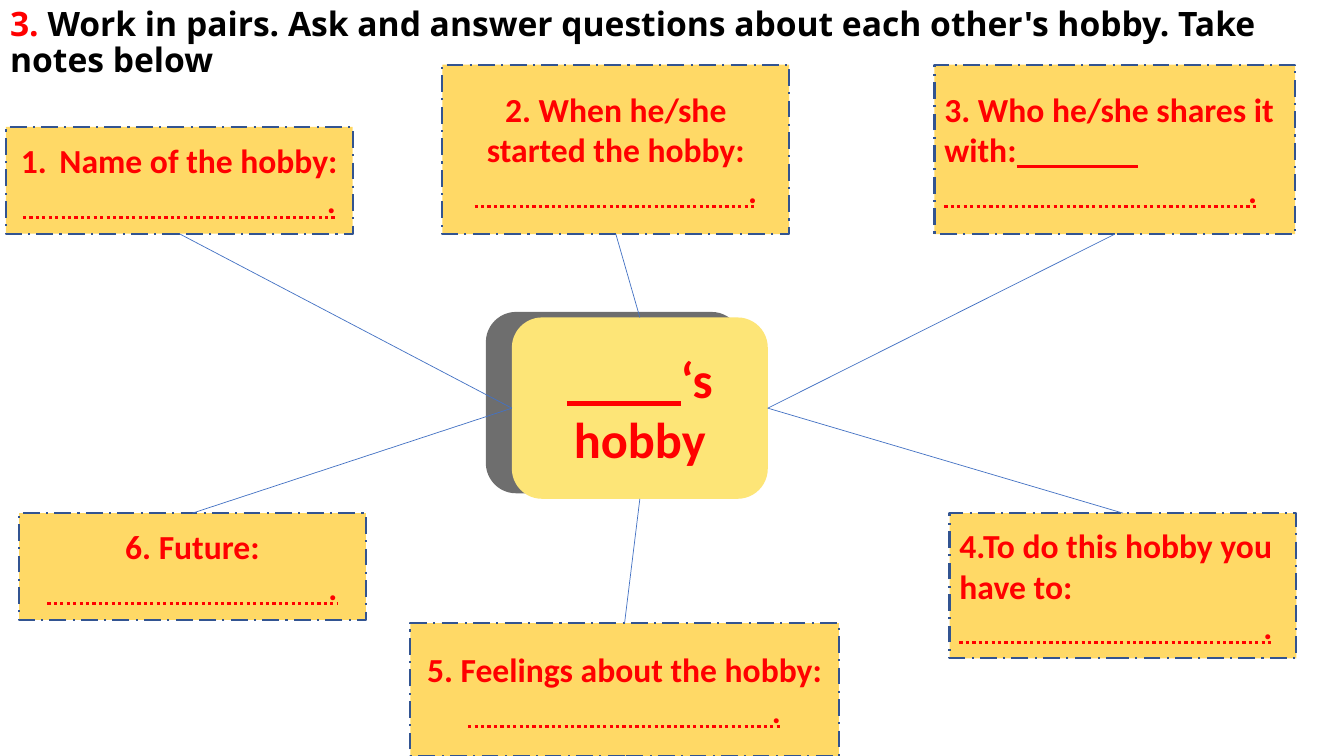
from lxml import etree
from pptx import Presentation
from pptx.dml.color import RGBColor
from pptx.enum.dml import MSO_LINE
from pptx.enum.shapes import MSO_CONNECTOR, MSO_SHAPE
from pptx.enum.text import MSO_ANCHOR, MSO_UNDERLINE, PP_ALIGN
from pptx.oxml.ns import qn
from pptx.util import Cm, Pt

RECTANGLE, ROUNDED = MSO_SHAPE.RECTANGLE, MSO_SHAPE.ROUNDED_RECTANGLE
STRAIGHT = MSO_CONNECTOR.STRAIGHT
LEFT, CENTER = PP_ALIGN.LEFT, PP_ALIGN.CENTER
TOP_ANCHOR, MIDDLE = MSO_ANCHOR.TOP, MSO_ANCHOR.MIDDLE
SOLID, DOTTED = MSO_UNDERLINE.SINGLE_LINE, MSO_UNDERLINE.DOTTED_LINE
LONG_DASH_DOT = MSO_LINE.LONG_DASH_DOT
TOP, LEFT_SIDE, BOTTOM, RIGHT_SIDE = range(4)

COLORS = {"red": "FF0000", "black": "000000", "box": "FFD966", "hub": "FDE577",
          "border": "325491", "link": "4472C4"}

# Content
TITLE = [("3.\u00a0", "red"),
         ("Work in pairs. Ask and answer questions about each other's hobby. "
          "Take notes below", "black")]
HUB = {"place": (12.9, 8, 6.45, 4.57), "blank": 10, "lines": ("‘s", "hobby")}
# place (cm), prompt, numbered, blank after prompt, answer blank, alignment,
# side of the box and side of the hub that are linked
NOTES = [
    ((0.15, 3.2, 8.74, 2.69), "Name of the hobby:", True, 0, 40, CENTER, BOTTOM, LEFT_SIDE),
    ((11.15, 1.63, 8.74, 4.27), "2. When he/she started the hobby:", False, 0, 36, CENTER,
     BOTTOM, TOP),
    ((23.55, 1.63, 9.09, 4.27), "3. Who he/she shares it with:", False, 16, 40, LEFT,
     BOTTOM, RIGHT_SIDE),
    ((0.48, 12.93, 8.74, 2.69), "6. Future:", False, 0, 37, CENTER, TOP, LEFT_SIDE),
    ((10.34, 15.7, 10.8, 3.35), "5. Feelings about the hobby:", False, 0, 40, CENTER,
     TOP, BOTTOM),
    ((23.93, 12.93, 8.74, 3.66), "4.To do this hobby you have to:", False, 0, 40, LEFT,
     TOP, RIGHT_SIDE),
]


def color(name):
    return RGBColor.from_string(COLORS[name])


def add_box(kind, place, fill):
    box = page.shapes.add_shape(kind, *map(Cm, place))
    box.shadow.inherit = False
    box.fill.solid()
    box.fill.fore_color.rgb = color(fill)
    box.text_frame.word_wrap = True
    box.text_frame.vertical_anchor = MIDDLE
    return box


def add_span(para, text, underline=None):
    span = para.add_run()
    span.text = text
    if underline:
        span.font.underline = underline


def format_para(para, size, align):
    para.alignment = align
    para.font.name = "Calibri"
    para.font.size = Pt(size)
    para.font.bold = True
    para.font.color.rgb = color("red")


def add_number(para):
    props = para._p.get_or_add_pPr()
    props.set("marL", str(Cm(0.97)))
    props.set("indent", str(-Cm(0.97)))
    etree.SubElement(props, qn("a:buFont"), typeface="+mj-lt")
    etree.SubElement(props, qn("a:buAutoNum"), type="arabicPeriod")


deck = Presentation()
deck.slide_width, deck.slide_height = Cm(33.87), Cm(19.05)
page = deck.slides.add_slide(deck.slide_layouts[5])

# Title
title = page.shapes.title
title.left, title.top, title.width, title.height = map(Cm, (0, 0.05, 33.87, 2.31))
title.text_frame.word_wrap = True
title.text_frame.vertical_anchor = TOP_ANCHOR
para = title.text_frame.paragraphs[0]
para.alignment = LEFT
para.line_spacing = 0.9
para.font.name = "Open Sans"
para.font.size = Pt(24)
para.font.bold = True
for text, name in TITLE:
    add_span(para, text)
    para.runs[-1].font.color.rgb = color(name)

# Hub with its offset shadow
hub = add_box(ROUNDED, HUB["place"], "hub")
hub.line.fill.background()
effects = hub._element.spPr.find(qn("a:effectLst"))
shadow = etree.SubElement(effects, qn("a:outerShdw"), blurRad="0", dist=str(Pt(19)),
                          dir=str(192 * 60000), algn="ctr", rotWithShape="0")
shade = etree.SubElement(shadow, qn("a:srgbClr"), val=COLORS["black"])
etree.SubElement(shade, qn("a:alpha"), val="57000")
owner, topic = hub.text_frame.paragraphs[0], hub.text_frame.add_paragraph()
add_span(owner, " " * HUB["blank"], SOLID)
for para, text in zip((owner, topic), HUB["lines"]):
    add_span(para, text)
    format_para(para, 36, CENTER)

# Note boxes
links = []
for place, prompt, numbered, prompt_blank, answer_blank, align, side, hub_side in NOTES:
    box = add_box(RECTANGLE, place, "box")
    box.line.color.rgb = color("border")
    box.line.width = Pt(1.5)
    box.line.dash_style = LONG_DASH_DOT
    question, answer = box.text_frame.paragraphs[0], box.text_frame.add_paragraph()
    if numbered:
        add_number(question)
    add_span(question, prompt)
    if prompt_blank:
        add_span(question, " " * prompt_blank, SOLID)
    add_span(answer, " " * answer_blank + ".", DOTTED)
    for para in (question, answer):
        format_para(para, 24, align)
    links.append((box, side, hub_side))

# Links from the hub to the notes
for box, side, hub_side in links:
    link = page.shapes.add_connector(STRAIGHT, 0, 0, 0, 0)
    link.begin_connect(hub, hub_side)
    link.end_connect(box, side)
    link.line.color.rgb = color("link")
    link.line.width = Pt(0.5)
    etree.SubElement(link._element.spPr, qn("a:effectLst"))

deck.save("out.pptx")
